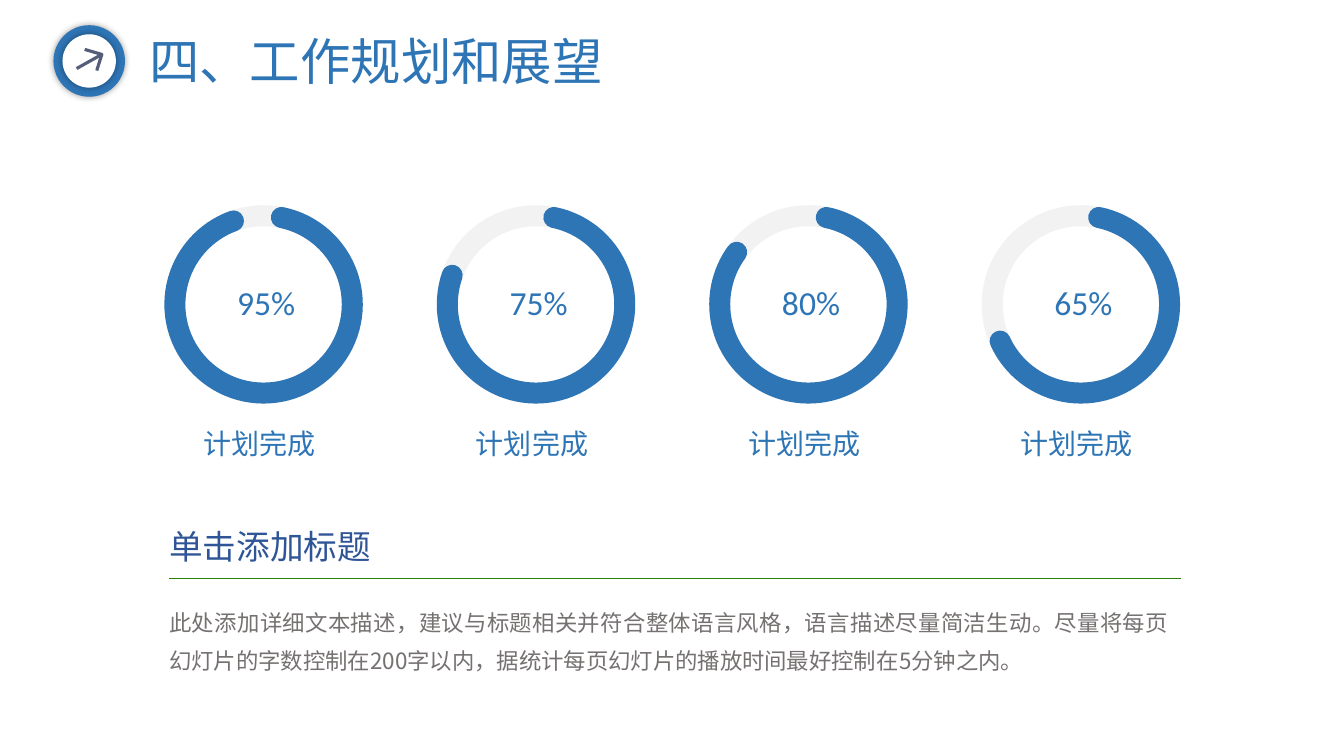
from lxml.etree import SubElement
from pptx import Presentation
from pptx.dml.color import RGBColor
from pptx.enum.shapes import MSO_CONNECTOR, MSO_SHAPE
from pptx.enum.text import MSO_AUTO_SIZE, PP_ALIGN
from pptx.oxml.ns import qn
from pptx.util import Inches, Pt

TITLE = "四、工作规划和展望"
GOALS = [
    ("95%", "计划完成", 143.14),
    ("75%", "计划完成", 112.52),
    ("80%", "计划完成", 122.65),
    ("65%", "计划完成", 86.36),
]
SUBTITLE = "单击添加标题"
DESCRIPTION = (
    "此处添加详细文本描述，建议与标题相关并符合整体语言风格，语言描述尽量简洁生动。"
    "尽量将每页幻灯片的字数控制在200字以内，据统计每页幻灯片的播放时间最好控制在5分钟之内。"
)

COLORS = {
    "blue": "2E75B6",
    "navy": "2F5597",
    "gray": "767171",
    "track": "F2F2F2",
    "white": "FFFFFF",
    "arrow": "545D79",
    "rule": "2C8207",
    "shadow": "000000",
}
HEADING_FONT = "Noto Sans CJK JP"
BODY_FONT = "Noto Sans CJK SC"
NUMBER_FONT = "Calibri"

SLIDE_WIDTH, SLIDE_HEIGHT = 13.33, 7.5
RING_LEFT, RING_TOP, RING_SIZE, RING_PITCH = 1.735, 2.14, 1.76, 2.702
RING_WIDTH, RING_TURN, ARC_START = 15, 11.6, 162
TEXT_LEFT, RULE_LEFT, RULE_RIGHT, RULE_TOP = 1.58, 1.68, 11.71, 5.74
BADGE_CENTER = (0.885, 0.605)
ARROW_TIP = (1.01, 0.54)

presentation = Presentation()
presentation.slide_width = Inches(SLIDE_WIDTH)
presentation.slide_height = Inches(SLIDE_HEIGHT)
slide = presentation.slides.add_slide(presentation.slide_layouts[6])


def color(name):
    return RGBColor.from_string(COLORS[name])


def add_text(text, box, size, font_name, color_name, align=PP_ALIGN.LEFT, wrap=False, spacing=None):
    text_box = slide.shapes.add_textbox(*map(Inches, box))
    frame = text_box.text_frame
    frame.text = text
    frame.word_wrap = wrap
    frame.auto_size = MSO_AUTO_SIZE.SHAPE_TO_FIT_TEXT
    paragraph = frame.paragraphs[0]
    paragraph.alignment = align
    if spacing:
        paragraph.line_spacing = spacing
    run = paragraph.runs[0]
    run.font.size = Pt(size)
    run.font.name = font_name
    run.font.color.rgb = color(color_name)
    SubElement(run.font._element, qn("a:ea"), typeface=font_name)


def set_line(shape, color_name, width):
    shape.line.color.rgb = color(color_name)
    shape.line.width = Pt(width)


def add_shape(kind, box, fill=None, line=None):
    shape = slide.shapes.add_shape(kind, *map(Inches, box))
    shape.shadow.inherit = False
    if fill:
        shape.fill.solid()
        shape.fill.fore_color.rgb = color(fill)
    else:
        shape.fill.background()
    if line:
        set_line(shape, line, RING_WIDTH)
    else:
        shape.line.fill.background()
    return shape


def add_line(start, end, color_name, width):
    connector = slide.shapes.add_connector(MSO_CONNECTOR.STRAIGHT, *map(Inches, start + end))
    set_line(connector, color_name, width)
    SubElement(connector._element.spPr, qn("a:effectLst"))


def add_badge_disc(diameter, fill):
    left, top = (center - diameter / 2 for center in BADGE_CENTER)
    disc = add_shape(MSO_SHAPE.OVAL, (left, top, diameter, diameter), fill)
    effects = disc._element.spPr.find(qn("a:effectLst"))
    shadow = SubElement(effects, qn("a:outerShdw"), blurRad=str(Pt(5)), dist="0", dir="0", rotWithShape="0")
    shadow_color = SubElement(shadow, qn("a:srgbClr"), val=COLORS["shadow"])
    SubElement(shadow_color, qn("a:alpha"), val="40000")


def add_badge():
    add_badge_disc(0.71, "blue")
    add_badge_disc(0.53, "white")
    builder = slide.shapes.build_freeform(Inches(0.84), Inches(0.49))
    builder.add_line_segments([tuple(map(Inches, point)) for point in (ARROW_TIP, (0.96, 0.7))], close=False)
    arrow_head = builder.convert_to_shape()
    arrow_head.shadow.inherit = False
    arrow_head.fill.background()
    set_line(arrow_head, "arrow", 2.25)
    add_line((0.76, 0.68), ARROW_TIP, "arrow", 2.25)


def add_goal(column, percent, label, arc_end):
    left = RING_LEFT + column * RING_PITCH
    ring_box = (left, RING_TOP, RING_SIZE, RING_SIZE)
    add_text(label, (left + 0.185, 4.18, 1.31, 0.43), 20, HEADING_FONT, "blue", PP_ALIGN.CENTER)
    add_shape(MSO_SHAPE.OVAL, ring_box, "white", "track")
    arc = add_shape(MSO_SHAPE.ARC, ring_box, line="blue")
    arc.adjustments[0] = ARC_START
    arc.adjustments[1] = arc_end
    arc.rotation = RING_TURN
    arc._element.spPr.find(qn("a:ln")).set("cap", "rnd")
    add_text(percent, (left + 0.47, 2.75, 0.87, 0.5), 24, NUMBER_FONT, "blue", PP_ALIGN.CENTER)


add_badge()
add_text(TITLE, (1.38, 0.25, 5.68, 0.7), 36, HEADING_FONT, "blue", wrap=True)
add_text(DESCRIPTION, (TEXT_LEFT, 5.89, 10.12, 0.85), 16, BODY_FONT, "gray", PP_ALIGN.JUSTIFY, True, 1.4)
add_text(SUBTITLE, (TEXT_LEFT, 5.17, 2.2, 0.5), 24, HEADING_FONT, "navy")
add_line((RULE_LEFT, RULE_TOP), (RULE_RIGHT, RULE_TOP), "rule", 1)
for column, goal in enumerate(GOALS):
    add_goal(column, *goal)

presentation.save("out.pptx")
